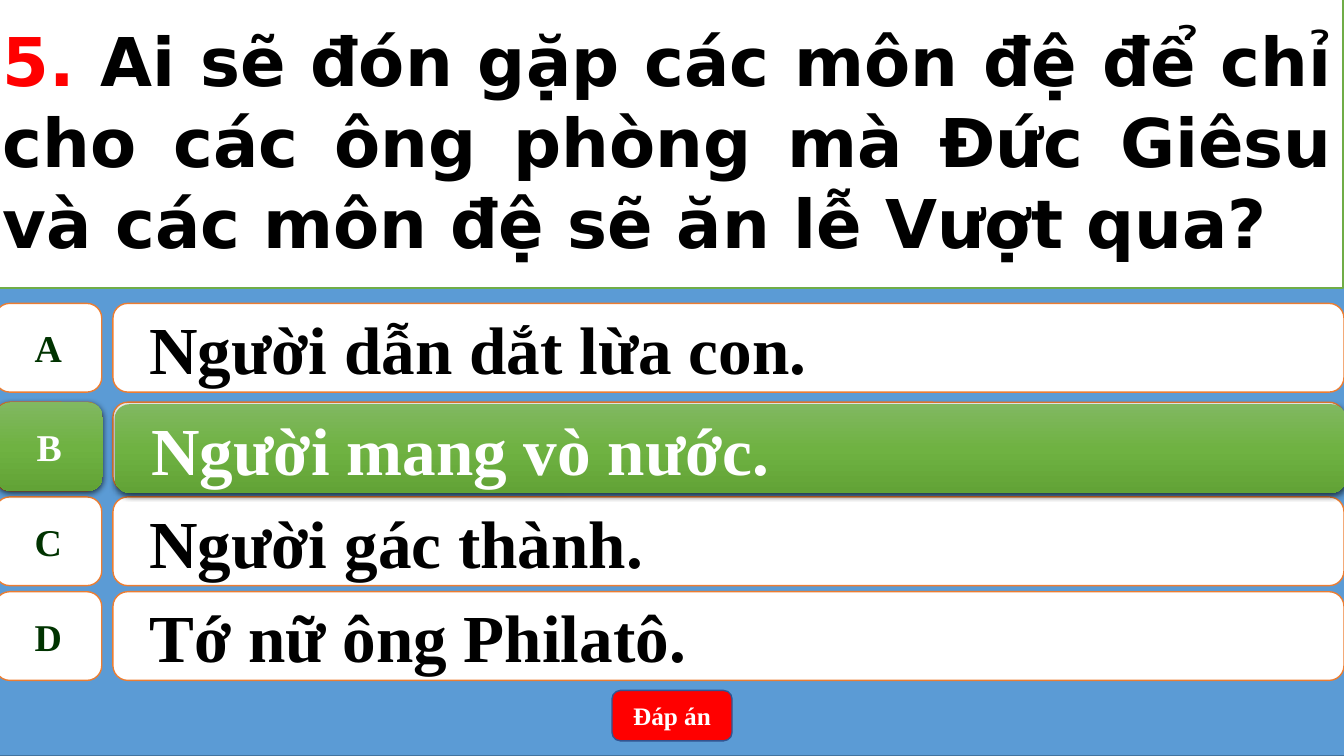
from dataclasses import dataclass

from lxml.etree import SubElement
from pptx import Presentation
from pptx.dml.color import RGBColor
from pptx.enum.shapes import MSO_SHAPE
from pptx.enum.text import MSO_ANCHOR, PP_ALIGN
from pptx.oxml.ns import qn
from pptx.util import Inches, Pt


@dataclass(frozen=True)
class Theme:
    """Colours, fonts and type sizes of the quiz."""

    backdrop: str = "5B9BD5"
    backdrop_line: str = "43739E"
    white: str = "FFFFFF"
    black: str = "000000"
    red: str = "FF0000"
    orange: str = "ED7D31"
    green: str = "70AD47"
    letter: str = "003300"
    button_line: str = "325491"
    highlight: tuple = ((0, "81B861"), (50, "6FB242"), (100, "62A336"))
    question_font: str = "DejaVu Sans"
    answer_font: str = "Times New Roman"
    large: int = 48
    medium: int = 27
    small: int = 18


class QuizSlide:
    """Draws quiz elements on one slide."""

    def __init__(self, slide, theme):
        """Keep the slide and its theme."""
        self.slide = slide
        self.theme = theme

    def box(self, kind, place, fill=None, line=None, shapes=None):
        """Add a shape with a flat fill, or a highlighted one without fill."""
        shapes = shapes or self.slide.shapes
        shape = shapes.add_shape(kind, *(Inches(length) for length in place))
        shape.shadow.inherit = False
        if line:
            shape.line.color.rgb = RGBColor.from_string(line)
            shape.line.width = Pt(1)
        else:
            shape.line.fill.background()
        if fill:
            shape.fill.solid()
            shape.fill.fore_color.rgb = RGBColor.from_string(fill)
        else:
            self.highlight(shape)
        return shape

    def highlight(self, shape):
        """Give a shape the green gradient and a soft shadow."""
        shape.fill.gradient()
        shape.fill.gradient_angle = 270
        properties = shape._element.spPr
        stops = properties.find(".//" + qn("a:gsLst"))
        for stop in list(stops):
            stops.remove(stop)
        for percent, colour in self.theme.highlight:
            stop = SubElement(stops, qn("a:gs"), pos=str(percent * 1000))
            SubElement(stop, qn("a:srgbClr"), val=colour)
        shadow = SubElement(
            properties.find(qn("a:effectLst")), qn("a:outerShdw"),
            blurRad=str(Pt(4.5)), dist=str(Pt(1.5)), dir="5400000",
            algn="ctr", rotWithShape="0",
        )
        colour = SubElement(shadow, qn("a:srgbClr"), val=self.theme.black)
        SubElement(colour, qn("a:alpha"), val="63000")

    def text(self, shape, words, size, colour, align=PP_ALIGN.CENTER, wrap=True):
        """Write one bold paragraph in a shape."""
        frame = shape.text_frame
        frame.word_wrap = wrap
        frame.vertical_anchor = MSO_ANCHOR.MIDDLE
        paragraph = frame.paragraphs[0]
        paragraph.alignment = align
        paragraph.add_run().text = words
        font = paragraph.font
        font.name = self.theme.answer_font
        font.size = Pt(size)
        font.bold = True
        font.color.rgb = RGBColor.from_string(colour)
        return paragraph

    def answer(self, letter, words, letter_place, words_place, chosen=False):
        """Add a grouped letter tile and answer bar."""
        theme = self.theme
        shapes = self.slide.shapes.add_group_shape().shapes
        fill, line = (None, None) if chosen else (theme.white, theme.orange)
        tile = self.box(MSO_SHAPE.FLOWCHART_ALTERNATE_PROCESS, letter_place, fill, line, shapes)
        self.text(tile, letter, theme.medium, theme.white if chosen else theme.letter, wrap=False)
        bar = self.box(MSO_SHAPE.ROUNDED_RECTANGLE, words_place, fill, line, shapes)
        paragraph = self.text(
            bar, words, theme.large, theme.white if chosen else theme.black, PP_ALIGN.LEFT
        )
        paragraph.level = 1
        indents = paragraph._p.get_or_add_pPr()
        indents.set("marL", str(Inches(0.5)))
        indents.set("indent", str(Inches(-0.28)))

    def button(self, words, place):
        """Add the red answer button."""
        theme = self.theme
        shape = self.box(MSO_SHAPE.ROUNDED_RECTANGLE, place, theme.red, theme.button_line)
        self.text(shape, words, theme.small, theme.white)

    def question(self, number, words, place):
        """Add the question panel with a red number."""
        theme = self.theme
        panel = self.box(MSO_SHAPE.RECTANGLE, place, theme.white, theme.green)
        paragraph = self.text(panel, number, theme.large, theme.black, PP_ALIGN.JUSTIFY)
        paragraph.font.name = theme.question_font
        paragraph.runs[0].font.color.rgb = RGBColor.from_string(theme.red)
        paragraph.add_run().text = words


def main():
    """Build and save the quiz slide."""
    presentation = Presentation()
    presentation.slide_width = Inches(13.33)
    presentation.slide_height = Inches(7.5)
    theme = Theme()
    quiz = QuizSlide(presentation.slides.add_slide(presentation.slide_layouts[6]), theme)

    quiz.box(MSO_SHAPE.RECTANGLE, (-0.05, 0, 13.39, 7.5), theme.backdrop, theme.backdrop_line)
    answers = (
        ("A", "Người dẫn dắt lừa con.", 3.01),
        ("B", "Người mang vò nước.", 3.99),
        ("C", "Người gác thành.", 4.93),
        ("D", "Tớ nữ ông Philatô.", 5.87),
    )
    for letter, words, top in answers:
        quiz.answer(letter, words, (-0.05, top, 1.06, 0.88), (1.12, top, 12.21, 0.88))
    letter, words, top = answers[1]
    quiz.answer(
        letter, words, (-0.04, top, 1.06, 0.88), (1.14, top + 0.02, 12.21, 0.88), chosen=True
    )
    quiz.button("Đáp án", (6.07, 6.85, 1.19, 0.5))
    quiz.question(
        "5. ",
        "Ai sẽ đón gặp các môn đệ để chỉ cho các ông phòng mà Đức Giêsu "
        "và các môn đệ sẽ ăn lễ Vượt qua?",
        (-0.07, -0.07, 13.39, 2.93),
    )
    presentation.save("out.pptx")


if __name__ == "__main__":
    main()
